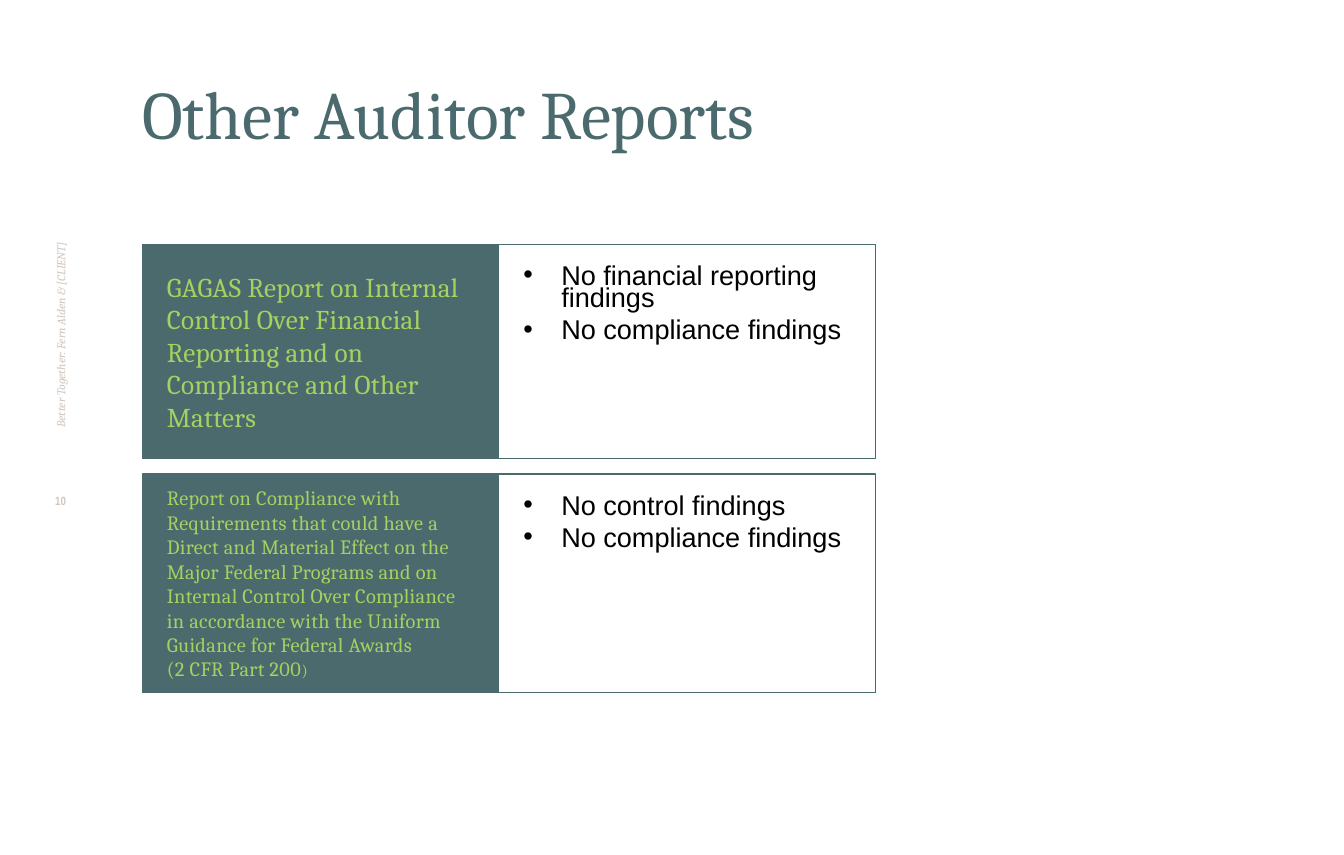
from lxml import etree
from pptx import Presentation
from pptx import util as u
from pptx.dml.color import RGBColor
from pptx.enum import shapes, text
from pptx.oxml.ns import qn

TEAL = RGBColor(0x4B, 0x6A, 0x6E)
GREEN = RGBColor(0xA6, 0xD0, 0x60)
SAND = RGBColor(0xD1, 0xC6, 0xBD)
BLACK = RGBColor(0, 0, 0)

REPORTS = [
    (5.08, 4.46, 16,
     [("GAGAS Report on Internal Control Over Financial Reporting "
       "and on Compliance and Other Matters", 16)],
     ["No financial reporting findings", "No compliance findings"]),
    (9.86, 4.54, 12,
     [("Report on Compliance with Requirements that could have a Direct and "
       "Material Effect on the Major Federal Programs and on Internal Control "
       "Over Compliance in accordance with the Uniform Guidance for Federal "
       "Awards\v(2 CFR Part 200", 12), (")", 9.5)],
     ["No control findings", "No compliance findings"]),
]


def set_frame(box, anchor, side=0, top=0):
    frame = box.text_frame
    frame.word_wrap = True
    frame.vertical_anchor = anchor
    frame.margin_left = frame.margin_right = u.Cm(side)
    frame.margin_top = u.Cm(top)
    frame.margin_bottom = 0
    return frame


def set_font(font, name, size, color):
    font.name = name
    font.size = u.Pt(size)
    font.color.rgb = color


deck = Presentation()
deck.slide_width = u.Cm(27.94)
deck.slide_height = u.Cm(17.78)
page = deck.slides.add_slide(deck.slide_layouts[6])

captions = [
    ("Other Auditor Reports", (2.96, 1.27, 23.07, 1.91),
     text.MSO_ANCHOR.BOTTOM, "Cambria", 40, TEAL),
    ("Better Together: Fern Alden & [CLIENT]", (0.79, 1.27, 0.94, 7.62),
     text.MSO_ANCHOR.MIDDLE, "Cambria", 7, SAND),
    ("10", (0.79, 10.26, 0.94, 0.97),
     text.MSO_ANCHOR.TOP, "Arial Narrow", 7, SAND),
]
boxes = []
for words, place, anchor, name, size, color in captions:
    box = page.shapes.add_textbox(*[u.Cm(length) for length in place])
    frame = set_frame(box, anchor)
    frame.text = words
    set_font(frame.paragraphs[0].runs[0].font, name, size, color)
    boxes.append(box)

title, tagline, number = boxes
tagline.text_frame._txBody.bodyPr.set("vert", "vert270")
tagline.text_frame.paragraphs[0].runs[0].font.italic = True
number.text_frame.paragraphs[0].alignment = text.PP_ALIGN.CENTER
number.text_frame.paragraphs[0].runs[0].font.bold = True

for top, height, size, label, findings in REPORTS:
    cells = []
    for left, width in ((2.96, 7.41), (10.37, 7.83)):
        cell = page.shapes.add_shape(
            shapes.MSO_SHAPE.RECTANGLE,
            u.Cm(left), u.Cm(top), u.Cm(width), u.Cm(height))
        cell.shadow.inherit = False
        cell.line.color.rgb = TEAL
        cell.line.width = u.Pt(0.75)
        cells.append(cell)
    report, result = cells

    report.fill.solid()
    report.fill.fore_color.rgb = TEAL
    para = set_frame(report, text.MSO_ANCHOR.MIDDLE, 0.51).paragraphs[0]
    para.text = label[0][0]
    para.alignment = text.PP_ALIGN.LEFT
    for words, small in label[1:]:
        para.add_run().text = words
    for span in para.runs:
        set_font(span.font, "Cambria", size, GREEN)
        span._r.get_or_add_rPr().set("spc", "20")
    para.runs[-1].font.size = u.Pt(label[-1][1])

    result.fill.background()
    frame = set_frame(result, text.MSO_ANCHOR.TOP, 0.51, 0.51)
    frame.text = "\n".join(findings)
    for index, para in enumerate(frame.paragraphs):
        props = para._p.get_or_add_pPr()
        props.set("marL", str(u.Cm(0.79)))
        props.set("indent", str(-u.Cm(0.79)))
        etree.SubElement(props, qn("a:buFont")).set("typeface", "Arial")
        etree.SubElement(props, qn("a:buChar")).set("char", "•")
        para.alignment = text.PP_ALIGN.LEFT
        para.line_spacing = u.Pt(13)
        para.space_before = u.Pt(6 if index else 0)
        set_font(para.runs[0].font, "Arial", 16, BLACK)

deck.save("out.pptx")
